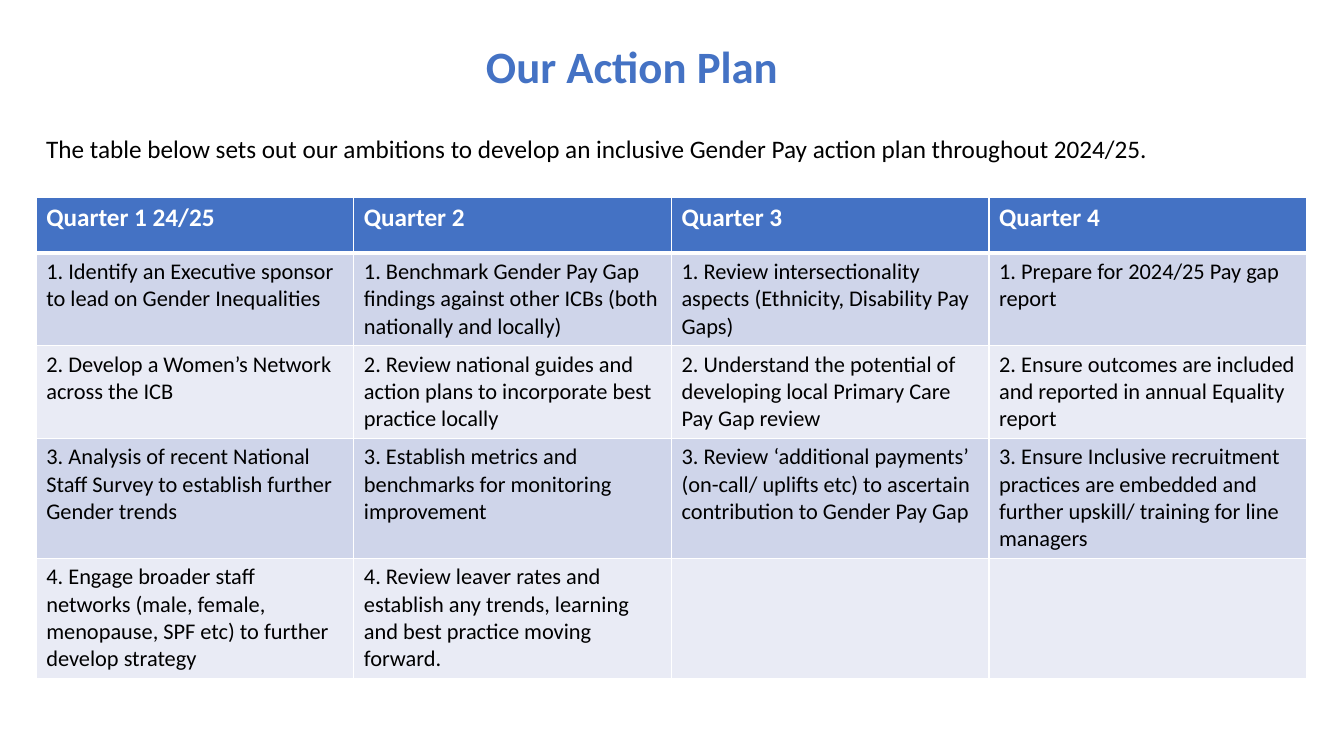
from dataclasses import dataclass

from lxml import etree
from pptx import Presentation
from pptx.dml.color import RGBColor
from pptx.enum.text import MSO_ANCHOR, PP_ALIGN
from pptx.oxml.ns import qn
from pptx.slide import Slide
from pptx.table import _Cell
from pptx.text.text import TextFrame
from pptx.util import Inches, Pt

LEFT = PP_ALIGN.LEFT
TOP, MIDDLE = MSO_ANCHOR.TOP, MSO_ANCHOR.MIDDLE
TITLE_ONLY = 5
FONT = "Calibri"
COLOURS = {
    "accent": "4472C4",
    "band_dark": "CFD5EA",
    "band_light": "E9EBF5",
    "text": "000000",
    "white": "FFFFFF",
}
LEFT_EDGE = 0.36
TABLE_TOP = 1.96
COLUMN_WIDTH = 3.15
ROW_HEIGHTS = [0.55, 0.92, 0.92, 1.19, 1.19]


@dataclass(frozen=True)
class Quarter:
    heading: str
    actions: tuple[str, ...]


QUARTERS = [
    Quarter("Quarter 1 24/25", (
        "1. Identify an Executive sponsor to lead on Gender Inequalities",
        "2. Develop a Women’s Network across the ICB",
        "3. Analysis of recent National Staff Survey to establish further Gender trends",
        "4. Engage broader staff networks (male, female, menopause, SPF etc) "
        "to further develop strategy",
    )),
    Quarter("Quarter 2", (
        "1. Benchmark Gender Pay Gap findings against other ICBs "
        "(both nationally and locally)",
        "2. Review national guides and action plans to incorporate best practice locally",
        "3. Establish metrics and benchmarks for monitoring improvement",
        "4. Review leaver rates and establish any trends, learning and best practice "
        "moving forward.",
    )),
    Quarter("Quarter 3", (
        "1. Review intersectionality aspects (Ethnicity, Disability Pay Gaps)",
        "2. Understand the potential of developing local Primary Care Pay Gap review",
        "3. Review ‘additional payments’ (on-call/ uplifts etc) to ascertain "
        "contribution to Gender Pay Gap",
    )),
    Quarter("Quarter 4", (
        "1. Prepare for 2024/25 Pay gap report",
        "2. Ensure outcomes are included and reported in annual Equality report",
        "3. Ensure Inclusive recruitment practices are embedded and further upskill/ "
        "training for line managers",
    )),
]


def rgb(colour: str) -> RGBColor:
    return RGBColor.from_string(COLOURS[colour])


def write_text(frame: TextFrame, text: str, *, size: float, colour: str = "text",
               bold: bool = False, anchor: MSO_ANCHOR = TOP,
               line_spacing: float = 1.0) -> None:
    frame.word_wrap = True
    frame.vertical_anchor = anchor
    paragraph = frame.paragraphs[0]
    paragraph.alignment = LEFT
    paragraph.line_spacing = line_spacing
    run = paragraph.add_run()
    run.text = text
    run.font.name = FONT
    run.font.size = Pt(size)
    run.font.bold = bold
    run.font.color.rgb = rgb(colour)


def add_borders(cell: _Cell, bottom_width: float, top_width: float) -> None:
    """Draw white rules around a cell, with widths in points."""
    properties = cell._tc.get_or_add_tcPr()
    widths = {"a:lnL": 1, "a:lnR": 1, "a:lnT": top_width, "a:lnB": bottom_width}
    for tag, width in widths.items():
        line = etree.SubElement(properties, qn(tag), w=str(Pt(width)))
        fill = etree.SubElement(line, qn("a:solidFill"))
        etree.SubElement(fill, qn("a:srgbClr"), val=COLOURS["white"])


def format_cell(cell: _Cell, row: int) -> None:
    add_borders(cell, bottom_width=3 if row == 0 else 1,
                top_width=3 if row == 1 else 1)
    band = "band_dark" if row % 2 else "band_light"
    cell.fill.solid()
    cell.fill.fore_color.rgb = rgb("accent" if row == 0 else band)


def add_title(slide: Slide) -> None:
    title = slide.shapes.title
    title.left, title.top = Inches(4.72), Inches(0.32)
    title.width, title.height = Inches(4.36), Inches(0.72)
    write_text(title.text_frame, "Our Action Plan", size=32, colour="accent",
               bold=True, anchor=MIDDLE, line_spacing=0.9)


def add_introduction(slide: Slide) -> None:
    introduction = slide.shapes.add_textbox(
        Inches(LEFT_EDGE), Inches(1.27), Inches(11.38), Inches(0.4))
    write_text(
        introduction.text_frame,
        "The table below sets out our ambitions to develop an inclusive "
        "Gender Pay action plan throughout 2024/25.",
        size=18)


def add_plan(slide: Slide) -> None:
    plan = slide.shapes.add_table(
        len(ROW_HEIGHTS), len(QUARTERS), Inches(LEFT_EDGE), Inches(TABLE_TOP),
        Inches(COLUMN_WIDTH * len(QUARTERS)), Inches(sum(ROW_HEIGHTS))).table
    plan.horz_banding = False
    for row, height in zip(plan.rows, ROW_HEIGHTS):
        row.height = Inches(height)
    for column, quarter in enumerate(QUARTERS):
        plan.columns[column].width = Inches(COLUMN_WIDTH)
        for row in range(len(ROW_HEIGHTS)):
            format_cell(plan.cell(row, column), row)
        write_text(plan.cell(0, column).text_frame, quarter.heading,
                   size=18, colour="white", bold=True)
        for row, action in enumerate(quarter.actions, start=1):
            write_text(plan.cell(row, column).text_frame, action, size=16)


def main() -> None:
    presentation = Presentation()
    presentation.slide_width = Inches(13.33)
    presentation.slide_height = Inches(7.5)
    slide = presentation.slides.add_slide(presentation.slide_layouts[TITLE_ONLY])
    add_title(slide)
    add_plan(slide)
    add_introduction(slide)
    presentation.save("out.pptx")


if __name__ == "__main__":
    main()
